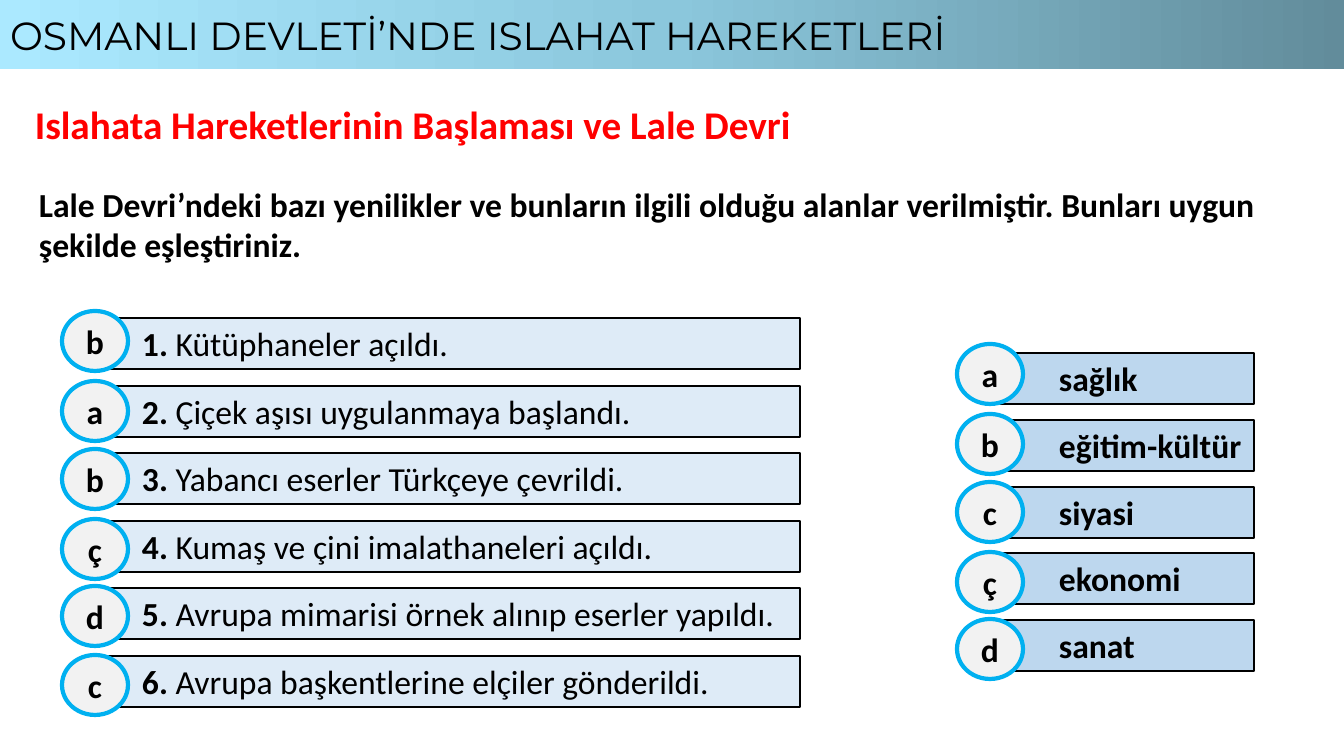
from copy import deepcopy

from pptx import Presentation
from pptx.dml.color import RGBColor
from pptx.enum.shapes import MSO_SHAPE
from pptx.enum.text import MSO_ANCHOR, MSO_AUTO_SIZE, PP_ALIGN
from pptx.oxml.ns import qn
from pptx.util import Pt

# Content
TITLE = "OSMANLI DEVLETİ’NDE ISLAHAT HAREKETLERİ"
HEADING = "Islahata Hareketlerinin Başlaması ve Lale Devri"
TASK = ("Lale Devri’ndeki bazı yenilikler ve bunların ilgili olduğu alanlar "
        "verilmiştir. Bunları uygun şekilde eşleştiriniz.")
INNOVATIONS = [
    ("b", "Kütüphaneler açıldı."),
    ("a", "Çiçek aşısı uygulanmaya başlandı."),
    ("b", "Yabancı eserler Türkçeye çevrildi."),
    ("ç", "Kumaş ve çini imalathaneleri açıldı."),
    ("d", "Avrupa mimarisi örnek alınıp eserler yapıldı."),
    ("c", "Avrupa başkentlerine elçiler gönderildi."),
]
FIELDS = [("a", "sağlık"), ("b", "eğitim-kültür"), ("c", "siyasi"),
          ("ç", "ekonomi"), ("d", "sanat")]

# Layout in px
EMU_PER_PX = 914400 / 100.8
SLIDE_SIZE = (1344, 756)
BAR_HEIGHT = 51
OVAL_SIZE = (66, 60)
OVAL_STEPS = [0, 70, 138, 208, 275, 344]
TITLE_GRADIENT = ["ABE9FF", "8BC7DC", "628C9B"]


def px(value):
    return round(value * EMU_PER_PX)


def color(hex_string):
    return RGBColor.from_string(hex_string)


def add_run(paragraph, text, size=24, bold=True, ink="000000", font="Calibri"):
    run = paragraph.add_run()
    run.text = text
    run.font.name = font
    run.font.size = Pt(size)
    run.font.bold = bold
    run.font.color.rgb = color(ink)


def add_text(box, text, wrap=True, **style):
    textbox = slide.shapes.add_textbox(*map(px, box))
    textbox.text_frame.word_wrap = wrap
    add_run(textbox.text_frame.paragraphs[0], text, **style)


def add_box(kind, box, fill, line, width, margin, align):
    """Add a filled shape and return its empty paragraph."""
    shape = slide.shapes.add_shape(kind, *map(px, box))
    shape.shadow.inherit = False
    shape.fill.solid()
    shape.fill.fore_color.rgb = color(fill)
    shape.line.color.rgb = color(line)
    shape.line.width = Pt(width)
    frame = shape.text_frame
    frame.word_wrap = True
    frame.vertical_anchor = MSO_ANCHOR.MIDDLE
    frame.margin_left = px(margin)
    frame.margin_right = frame.margin_top = frame.margin_bottom = 0
    frame.paragraphs[0].alignment = align
    return frame.paragraphs[0]


def add_column(rows, left, top, pitch, width, fill, margin, oval_left, oval_top):
    """Add a column of bars, each with a lettered oval; rows hold (letter, runs)."""
    for index, (letter, runs) in enumerate(rows):
        box = (left, top + round(index * pitch), width, BAR_HEIGHT)
        paragraph = add_box(MSO_SHAPE.RECTANGLE, box, fill, "000000", 1,
                            margin, PP_ALIGN.LEFT)
        for text, bold in runs:
            add_run(paragraph, text, bold=bold)
    for step, (letter, runs) in zip(OVAL_STEPS, rows):
        box = (oval_left, oval_top + step, *OVAL_SIZE)
        add_run(add_box(MSO_SHAPE.OVAL, box, "F2F2F2", "00B0F0", 3,
                        0, PP_ALIGN.CENTER), letter)


presentation = Presentation()
presentation.slide_width, presentation.slide_height = map(px, SLIDE_SIZE)
slide = presentation.slides.add_slide(presentation.slide_layouts[5])

# Title band
title = slide.shapes.title
title.left, title.top, title.width, title.height = map(px, (0, 0, 1344, 69))
title.fill.gradient()
title.fill.gradient_angle = 0
stop_list = title.element.spPr.find(qn("a:gradFill")).find(qn("a:gsLst"))
stop_list.insert(1, deepcopy(stop_list[0]))
for index, stop in enumerate(title.fill.gradient_stops):
    stop.position = index / 2
    stop.color.rgb = color(TITLE_GRADIENT[index])
title.text_frame.auto_size = MSO_AUTO_SIZE.NONE
title.text_frame.vertical_anchor = MSO_ANCHOR.MIDDLE
title_paragraph = title.text_frame.paragraphs[0]
title_paragraph.alignment = PP_ALIGN.LEFT
add_run(title_paragraph, TITLE, size=28, bold=False, font="Montserrat")

# Heading and task
add_text((25, 95, 786, 57), HEADING, wrap=False, size=28, ink="FF0000")
add_text((29, 179, 1264, 92), TASK)

# Matching columns
innovation_rows = [(letter, [(f"{number}. ", True), (text, False)])
                   for number, (letter, text) in enumerate(INNOVATIONS, 1)]
field_rows = [(letter, [(text, True)]) for letter, text in FIELDS]
add_column(innovation_rows, left=109, top=318, pitch=67.6, width=691,
           fill="DEEBF7", margin=33, oval_left=62, oval_top=311)
add_column(field_rows, left=999, top=353, pitch=66.8, width=255,
           fill="BDD7EE", margin=60, oval_left=957, oval_top=344)

presentation.save("out.pptx")
